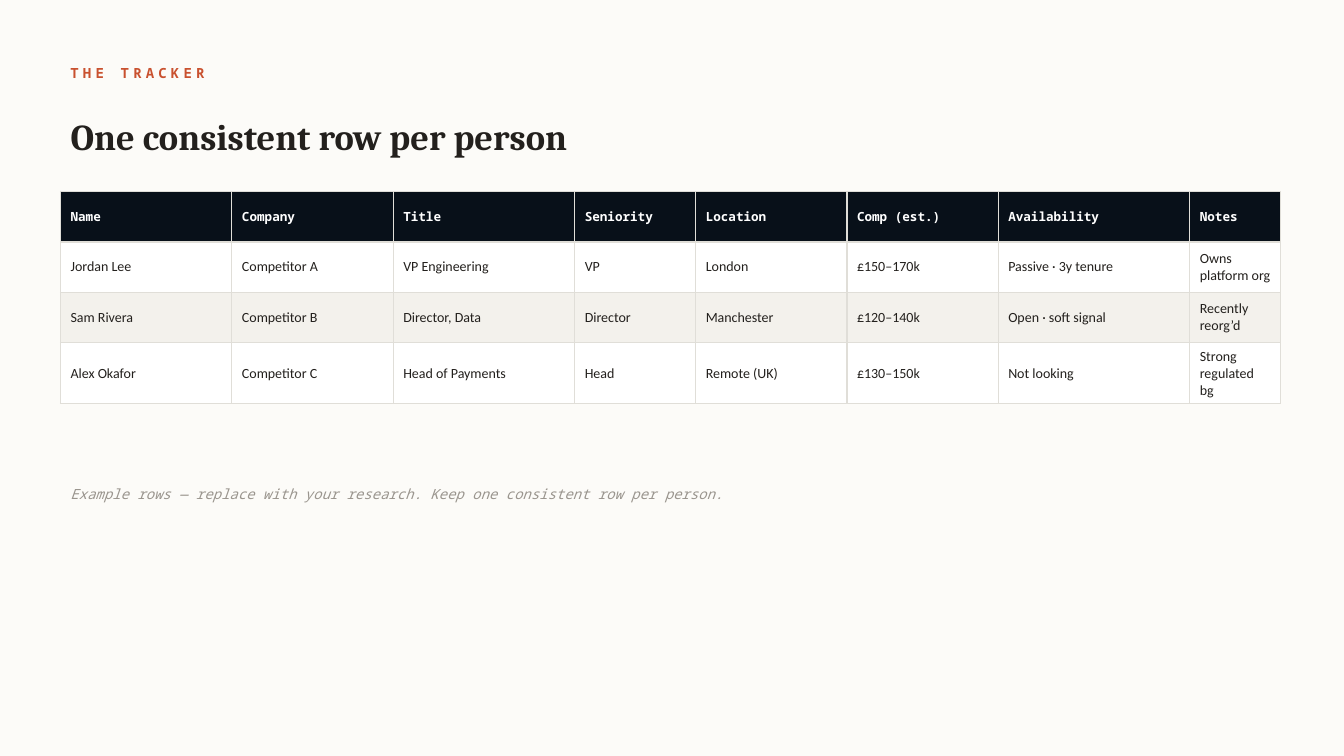
"""Build the tracker slide: a label, a title, a table of people and a note."""
from lxml import etree
from pptx import Presentation
from pptx.dml.color import RGBColor
from pptx.enum.text import MSO_ANCHOR, MSO_AUTO_SIZE, PP_ALIGN
from pptx.oxml.ns import qn
from pptx.util import Inches, Pt

MIDDLE = MSO_ANCHOR.MIDDLE
FIXED = MSO_AUTO_SIZE.NONE
LEFT = PP_ALIGN.LEFT

HUES = {
    "page": "FCFBF8",
    "ink": "23201D",
    "accent": "C9512F",
    "muted": "9A958E",
    "head": "081019",
    "white": "FFFFFF",
    "band": "F3F1EC",
    "rule": "E0DED8",
}
MONO, SERIF, SANS = "Noto Sans Mono", "Cambria", "Calibri"
STEP = 0.05
EDGE, SPAN = 12, 242
TALL = 10
COLS = {
    "Name": 34,
    "Company": 32,
    "Title": 36,
    "Seniority": 24,
    "Location": 30,
    "Comp (est.)": 30,
    "Availability": 38,
    "Notes": 18,
}
PEOPLE = [
    ["Jordan Lee", "Competitor A", "VP Engineering", "VP", "London",
     "£150–170k", "Passive · 3y tenure", "Owns platform org"],
    ["Sam Rivera", "Competitor B", "Director, Data", "Director", "Manchester",
     "£120–140k", "Open · soft signal", "Recently reorg’d"],
    ["Alex Okafor", "Competitor C", "Head of Payments", "Head", "Remote (UK)",
     "£130–150k", "Not looking", "Strong regulated bg"],
]


def grid(count):
    """Turn grid steps into a length."""
    return Inches(count * STEP)


def color(name):
    """Look up a colour by its name."""
    return RGBColor.from_string(HUES[name])


def write(frame, text, face, size, hue, bold=False, italic=False):
    """Put one styled line of text in a frame and return its paragraph."""
    line = frame.paragraphs[0]
    line.text = text
    line.alignment = LEFT
    font = line.font
    font.name, font.size = face, Pt(size)
    font.bold, font.italic = bold, italic
    font.color.rgb = color(hue)
    return line


def place(shape, top, high):
    """Set a text shape on the grid and fix its frame."""
    shape.left, shape.top = grid(EDGE), grid(top)
    shape.width, shape.height = grid(SPAN), grid(high)
    frame = shape.text_frame
    frame.word_wrap = True
    frame.auto_size = FIXED
    frame.vertical_anchor = MIDDLE
    return frame


def label(slide, top, high):
    """Add a text box on the grid and return its frame."""
    return place(slide.shapes.add_textbox(0, 0, 0, 0), top, high)


def border(cell):
    """Draw a thin rule on all four sides of a cell."""
    props = cell._tc.get_or_add_tcPr()
    for side in ("a:lnL", "a:lnR", "a:lnT", "a:lnB"):
        line = etree.SubElement(props, qn(side), w=str(Pt(1)))
        fill = etree.SubElement(line, qn("a:solidFill"))
        etree.SubElement(fill, qn("a:srgbClr"), val=HUES["rule"])


def tracker(slide, top):
    """Add the table with a dark head and banded rows."""
    rows = [list(COLS), *PEOPLE]
    table = slide.shapes.add_table(
        len(rows), len(COLS), grid(EDGE), grid(top),
        grid(SPAN), grid(TALL * len(rows))).table
    table.horz_banding = False
    for col, wide in zip(table.columns, COLS.values()):
        col.width = grid(wide)
    for i, row in enumerate(rows):
        table.rows[i].height = grid(TALL)
        back = "head" if i == 0 else "white" if i % 2 else "band"
        style = (SANS, 10, "ink") if i else (MONO, 9, "white", True)
        for j, text in enumerate(row):
            cell = table.cell(i, j)
            border(cell)
            cell.fill.solid()
            cell.fill.fore_color.rgb = color(back)
            cell.vertical_anchor = MIDDLE
            write(cell.text_frame, text, *style)


def main():
    """Build and save the slide."""
    deck = Presentation()
    deck.slide_width, deck.slide_height = Inches(13.33), Inches(7.5)
    slide = deck.slides.add_slide(deck.slide_layouts[5])
    slide.background.fill.solid()
    slide.background.fill.fore_color.rgb = color("page")

    line = write(label(slide, 11, 7), "THE TRACKER", MONO, 10, "accent", True)
    line.runs[0]._r.get_or_add_rPr().set("spc", "300")
    write(place(slide.shapes.title, 19, 16),
          "One consistent row per person", SERIF, 26, "ink", True)
    tracker(slide, 38)
    write(label(slide, 94, 8),
          "Example rows — replace with your research. "
          "Keep one consistent row per person.",
          MONO, 10, "muted", italic=True)
    deck.save("out.pptx")


if __name__ == "__main__":
    main()
